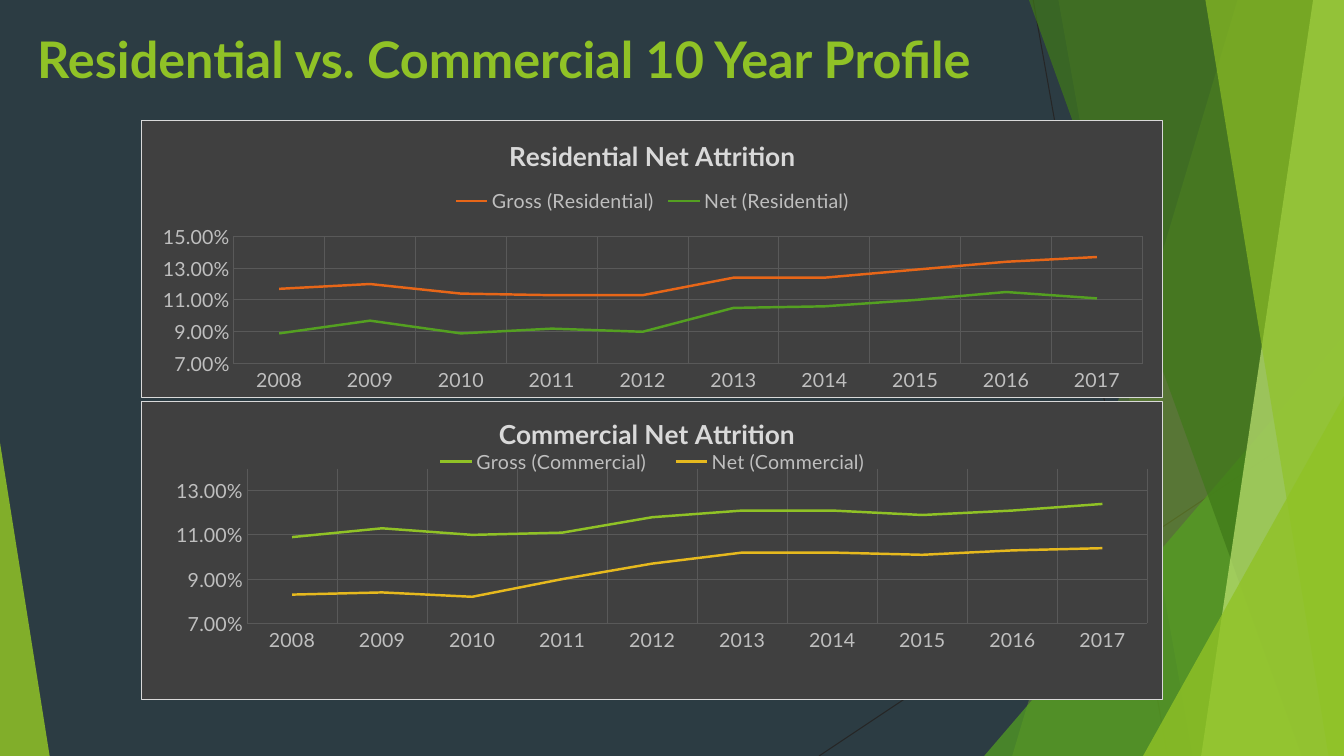
from lxml import etree
from pptx import Presentation
from pptx.chart.data import CategoryChartData
from pptx.dml.color import RGBColor
from pptx.enum.chart import XL_CHART_TYPE, XL_LEGEND_POSITION, XL_TICK_MARK
from pptx.enum.shapes import MSO_CONNECTOR, MSO_SHAPE
from pptx.oxml import parse_xml
from pptx.oxml.ns import nsdecls, qn
from pptx.util import Pt

LINE_CHART = XL_CHART_TYPE.LINE
LEGEND_TOP = XL_LEGEND_POSITION.TOP
NO_TICK = XL_TICK_MARK.NONE
STRAIGHT = MSO_CONNECTOR.STRAIGHT
TRIANGLE = MSO_SHAPE.ISOSCELES_TRIANGLE
WIDTH, HEIGHT = 960, 540
FONT = "Lato"
LIME, GREEN = "90C226", "54A021"


def paint(color_format, color):
    color_format.rgb = RGBColor.from_string(color)


def place(part, index, **fractions):
    """Give a chart part a manual layout in fractions of the chart area."""
    old = part.find(qn("c:layout"))
    if old is not None:
        part.remove(old)
    layout = etree.Element(qn("c:layout"))
    manual = etree.SubElement(layout, qn("c:manualLayout"))
    if part.tag == qn("c:plotArea"):
        etree.SubElement(manual, qn("c:layoutTarget"), val="inner")
    for key in ("x", "y"):
        etree.SubElement(manual, qn(f"c:{key}Mode"), val="edge")
    for key, value in fractions.items():
        etree.SubElement(manual, qn(f"c:{key}"), val=str(value))
    part.insert(index, layout)


prs = Presentation()
prs.slide_width, prs.slide_height = Pt(WIDTH), Pt(HEIGHT)
slide = prs.slides.add_slide(prs.slide_layouts[6])
slide.background.fill.solid()
paint(slide.background.fill.fore_color, "2C3C43")

# Thin lines behind the facets
for x1, y1, x2, y2 in [(738, 0, 834, HEIGHT), (WIDTH, 290, 585, HEIGHT)]:
    thin_line = slide.shapes.add_connector(STRAIGHT, Pt(x1), Pt(y1), Pt(x2), Pt(y2))
    thin_line.line.width = Pt(0.75)
    paint(thin_line.line.color, "262626")
    etree.SubElement(thin_line.element.spPr, qn("a:effectLst"))

# Facets from back to front: (top x, bottom x) reach the right edge,
# (left, top, width, apex) are triangles standing on the bottom edge
facets = [
    ((884, 723), LIME, 30),
    ((756, 852), LIME, 20),
    ((703, 240, 257, 1), GREEN, 72),
    ((735, 930), "3F7819", 70),
    ((938, 858), "C0E474", 70),
    ((861, 949), LIME, 65),
    ((816.5, 283, 143.5, 1), LIME, 80),
    ((0, 316, 35.5, 0), LIME, 85),
]
for outline, color, opacity in facets:
    if len(outline) == 2:
        top_x, bottom_x = outline
        builder = slide.shapes.build_freeform(top_x, 0, scale=Pt(1))
        builder.add_line_segments([(WIDTH, 0), (WIDTH, HEIGHT), (bottom_x, HEIGHT)])
        facet = builder.convert_to_shape()
    else:
        left, top, width, apex = outline
        facet = slide.shapes.add_shape(TRIANGLE, Pt(left), Pt(top), Pt(width), Pt(HEIGHT - top))
        facet.adjustments[0] = apex
    facet.shadow.inherit = False
    facet.line.fill.background()
    facet.fill.solid()
    paint(facet.fill.fore_color, color)
    tint = facet.element.spPr.find(qn("a:solidFill"))[0]
    etree.SubElement(tint, qn("a:alpha"), val=str(opacity * 1000))

headline = slide.shapes.add_textbox(Pt(19.5), Pt(16.5), Pt(762.5), Pt(70)).text_frame
headline.word_wrap = True
headline.text = "Residential vs. Commercial 10 Year Profile"
headline_font = headline.paragraphs[0].runs[0].font
headline_font.name, headline_font.size, headline_font.bold = FONT, Pt(36), True
paint(headline_font.color, LIME)

years = [str(year) for year in range(2008, 2018)]
profiles = [
    {
        "segment": "Commercial", "top": 286.5, "height": 213.5, "maximum": 0.14,
        "gross": (LIME, [0.109, 0.113, 0.11, 0.111, 0.118, 0.121, 0.121, 0.119, 0.121, 0.124]),
        "net": ("E6B91E", [0.083, 0.084, 0.082, 0.09, 0.097, 0.102, 0.102, 0.101, 0.103, 0.104]),
        "title": dict(x=0.345, y=0.03),
        "legend": dict(x=0.27, y=0.16, w=0.46, h=0.08),
        "plot": dict(x=0.103, y=0.225, w=0.882, h=0.52),
    },
    {
        "segment": "Residential", "top": 86, "height": 198.5, "maximum": 0.15,
        "gross": ("E76618", [0.117, 0.12, 0.114, 0.113, 0.113, 0.124, 0.124, 0.129, 0.134, 0.137]),
        "net": (GREEN, [0.089, 0.097, 0.089, 0.092, 0.09, 0.105, 0.106, 0.11, 0.115, 0.111]),
        "title": dict(x=0.355, y=0.04),
        "legend": dict(x=0.3, y=0.245, w=0.4, h=0.09),
        "plot": dict(x=0.09, y=0.417, w=0.89, h=0.46),
    },
]
for profile in profiles:
    segment = profile["segment"]
    rates = CategoryChartData(number_format="0.00%")
    rates.categories = years
    for measure in ("gross", "net"):
        rates.add_series(f"{measure.title()} ({segment})", profile[measure][1])
    chart = slide.shapes.add_chart(
        LINE_CHART, Pt(101), Pt(profile["top"]), Pt(730), Pt(profile["height"]), rates
    ).chart
    chart.font.name, chart.font.size = FONT, Pt(10)
    paint(chart.font.color, "FFFFFF")

    chart.has_title = True
    title = chart.chart_title
    title.include_in_layout = False
    title.text_frame.text = f"{segment} Net Attrition"
    title_font = title.text_frame.paragraphs[0].runs[0].font
    title_font.name, title_font.size, title_font.bold = FONT, Pt(18.8), True
    paint(title_font.color, "D9D9D9")

    chart.has_legend = True
    chart.legend.position = LEGEND_TOP
    chart.legend.include_in_layout = False

    for axis in (chart.category_axis, chart.value_axis):
        axis.major_tick_mark = axis.minor_tick_mark = NO_TICK
        axis.format.line.fill.background()
        axis.has_major_gridlines = True
        axis.major_gridlines.format.line.width = Pt(0.75)
        paint(axis.major_gridlines.format.line.color, "595959")
    for font in (chart.legend.font, chart.category_axis.tick_labels.font,
                 chart.value_axis.tick_labels.font):
        font.name, font.size = FONT, Pt(14)
        paint(font.color, "BFBFBF")
    chart.value_axis.minimum_scale = 0.07
    chart.value_axis.maximum_scale = profile["maximum"]
    chart.value_axis.major_unit = 0.02
    chart.value_axis.tick_labels.number_format = "0.00%"
    chart.value_axis.tick_labels.number_format_is_linked = False

    for series, measure in zip(chart.plots[0].series, ("gross", "net")):
        series.smooth = False
        series.format.line.width = Pt(1.75)
        paint(series.format.line.color, profile[measure][0])

    chart_root = chart.element.find(qn("c:chart"))
    place(chart_root.find(qn("c:title")), 1, **profile["title"])
    place(chart_root.find(qn("c:legend")), 1, **profile["legend"])
    place(chart_root.find(qn("c:plotArea")), 0, **profile["plot"])
    chart_root.addnext(parse_xml(
        f'<c:spPr {nsdecls("c", "a")}>'
        '<a:solidFill><a:srgbClr val="404040"/></a:solidFill>'
        f'<a:ln w="{Pt(0.75)}"><a:solidFill><a:srgbClr val="D9D9D9"/></a:solidFill></a:ln>'
        "</c:spPr>"
    ))

prs.save("out.pptx")
